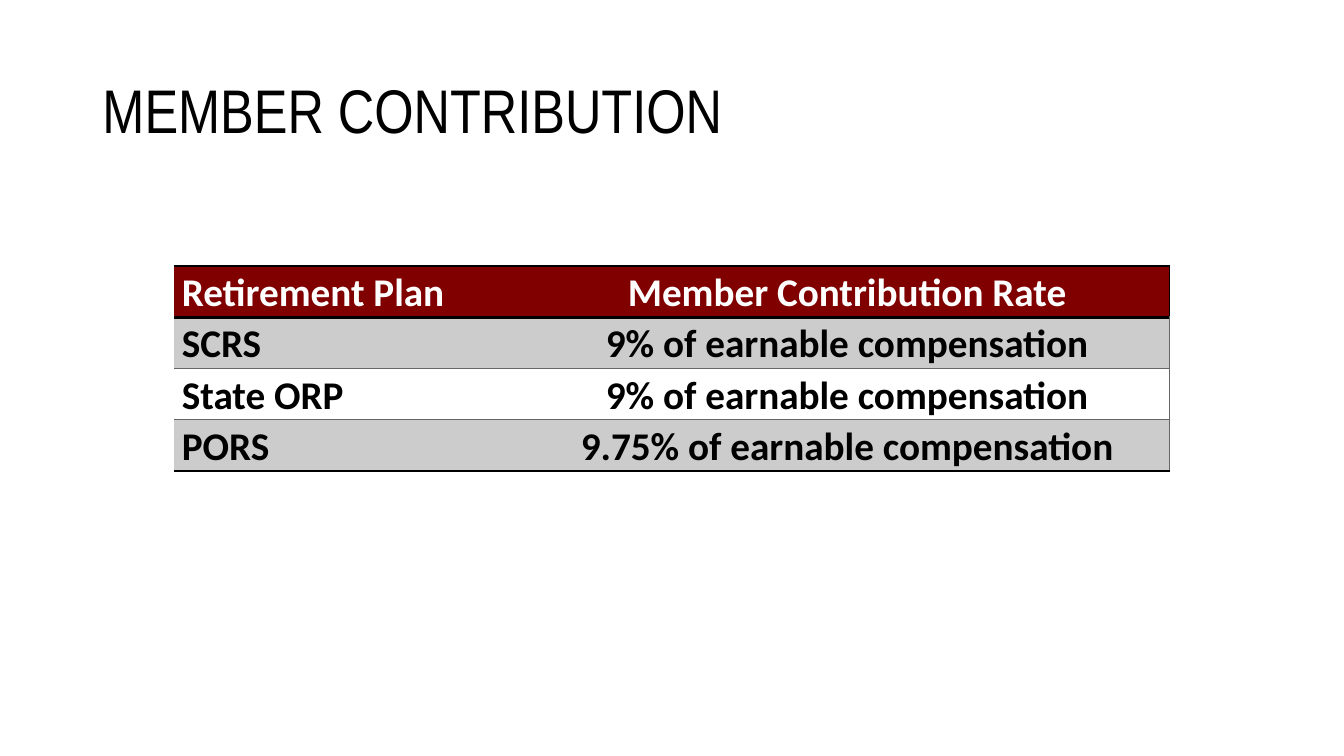
"""Build the member contribution slide with its table of rates."""
import dataclasses

import pptx
import pptx.dml.color
import pptx.enum.text
import pptx.oxml
import pptx.oxml.ns
import pptx.util

Pt = pptx.util.Pt
ALIGN = pptx.enum.text.PP_ALIGN
ANCHOR = pptx.enum.text.MSO_ANCHOR


@dataclasses.dataclass(frozen=True)
class Theme:
    black: str = "000000"
    white: str = "FFFFFF"
    header: str = "800000"
    band: str = "CCCCCC"
    rule: str = "666666"
    title_font: str = "Arial Narrow"
    body_font: str = "Calibri"
    title_size: float = 44
    body_size: float = 28
    thick: float = 2.25
    thin: float = 1


def set_text(tf, text, *, font, size, color, bold=False, align=ALIGN.LEFT,
             spacing=1.0, after=0):
    p = tf.paragraphs[0]
    p.alignment = align
    p.line_spacing = spacing
    p.space_before = Pt(0)
    p.space_after = Pt(after)
    r = p.add_run()
    r.text = text
    r.font.name = font
    r.font.size = Pt(size)
    r.font.bold = bold
    r.font.color.rgb = pptx.dml.color.RGBColor.from_string(color)


class SlideBuilder:
    def __init__(self, prs, theme):
        self.theme = theme
        self.s = prs.slides.add_slide(prs.slide_layouts[5])

    def title(self, text, x, y, w, h):
        t = self.theme
        sp = self.s.shapes.title
        sp.left, sp.top, sp.width, sp.height = Pt(x), Pt(y), Pt(w), Pt(h)
        tf = sp.text_frame
        tf.word_wrap = True
        tf.auto_size = pptx.enum.text.MSO_AUTO_SIZE.NONE
        tf.vertical_anchor = ANCHOR.MIDDLE
        set_text(tf, text, font=t.title_font, size=t.title_size,
                 color=t.black, spacing=0.9)

    def borders(self, cell, **sides):
        tc_pr = cell._tc.get_or_add_tcPr()
        for i, side in enumerate("LRTB"):
            color, width = sides.get(side, (None, 0))
            fill = (f'<a:solidFill><a:srgbClr val="{color}"/></a:solidFill>'
                    if color else "<a:noFill/>")
            tc_pr.insert(i, pptx.oxml.parse_xml(
                f'<a:ln{side} {pptx.oxml.ns.nsdecls("a")} w="{Pt(width)}">'
                f'{fill}</a:ln{side}>'))

    def table(self, rows, x, y, widths, row_height):
        t = self.theme
        heavy, light = (t.black, t.thick), (t.rule, t.thin)
        last = len(rows) - 1
        tbl = self.s.shapes.add_table(
            len(rows), len(widths), Pt(x), Pt(y), Pt(sum(widths)),
            Pt(row_height * len(rows))).table
        tbl.horz_banding = False
        for col, width in zip(tbl.columns, widths):
            col.width = Pt(width)
        for i, row in enumerate(rows):
            for j, text in enumerate(row):
                cell = tbl.cell(i, j)
                cell.margin_left = cell.margin_right = Pt(5.4)
                cell.margin_top = cell.margin_bottom = Pt(0)
                if i == 0 or i % 2:
                    cell.fill.solid()
                    cell.fill.fore_color.rgb = pptx.dml.color.RGBColor.from_string(
                        t.band if i else t.header)
                else:
                    cell.fill.background()
                sides = {"T": heavy if i < 2 else light,
                         "B": heavy if i in (0, last) else light}
                if j == len(widths) - 1:
                    sides["R"] = light if i else (t.black, t.thin)
                self.borders(cell, **sides)
                set_text(cell.text_frame, text, font=t.body_font,
                         size=t.body_size, color=t.black if i else t.white,
                         bold=True, align=ALIGN.CENTER if j else ALIGN.LEFT,
                         spacing=1.07, after=8)


def main():
    prs = pptx.Presentation()
    prs.slide_width, prs.slide_height = Pt(960), Pt(540)
    slide = SlideBuilder(prs, Theme())
    slide.title("MEMBER CONTRIBUTION", 66, 28.75, 828, 104.4)
    slide.table([
        ("Retirement Plan", "Member Contribution Rate"),
        ("SCRS", "9% of earnable compensation"),
        ("State ORP", "9% of earnable compensation"),
        ("PORS", "9.75% of earnable compensation"),
    ], 124.5, 190, (250, 461), 36.5)
    prs.save("out.pptx")


if __name__ == "__main__":
    main()
